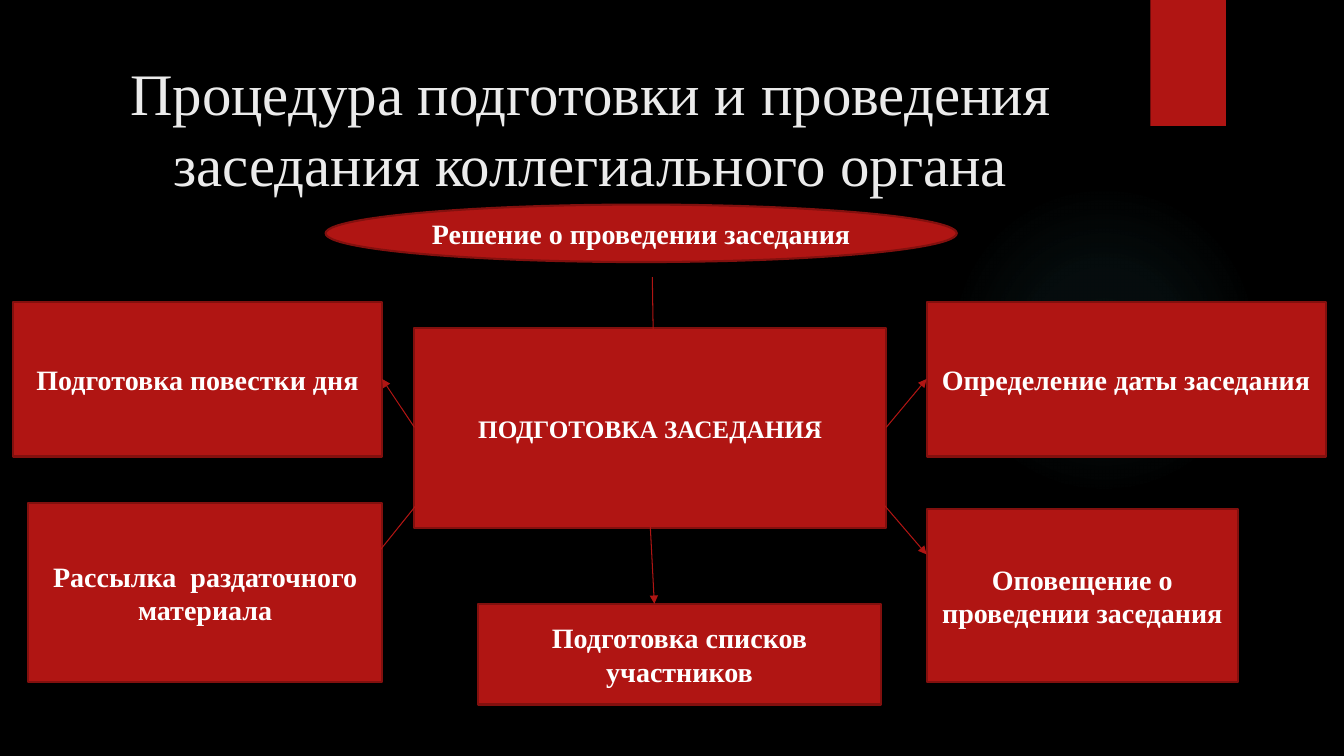
from pptx import Presentation
from pptx.dml.color import RGBColor
from pptx.enum.shapes import MSO_CONNECTOR, MSO_SHAPE
from pptx.enum.text import MSO_ANCHOR, MSO_AUTO_SIZE, PP_ALIGN
from pptx.oxml import parse_xml
from pptx.oxml.ns import nsdecls, qn
from pptx.util import Pt
from lxml.etree import SubElement

PX = 9144  # EMU per px, 100 px to the inch


class SlideBuilder:
    FONT = "Times New Roman"
    COLORS = {"bg": "000000", "red": "B01513", "border": "82100E",
              "title": "EBEBEB", "text": "FFFFFF", "glow": "50B9C1"}

    def __init__(self, prs):
        self.s = prs.slides.add_slide(prs.slide_layouts[5])
        fill = self.s.background.fill
        fill.solid()
        fill.fore_color.rgb = self.color("bg")

    def color(self, name):
        return RGBColor.from_string(self.COLORS[name])

    def put_text(self, tf, text, size, color, bold=False):
        tf.word_wrap = True
        tf.auto_size = MSO_AUTO_SIZE.NONE
        tf.vertical_anchor = MSO_ANCHOR.MIDDLE
        tf.text = text
        p = tf.paragraphs[0]
        p.alignment = PP_ALIGN.CENTER
        font = p.runs[0].font
        font.name, font.size, font.bold = self.FONT, Pt(size), bold
        font.color.rgb = self.color(color)

    def title(self, text, x, y, w, h):
        sp = self.s.shapes.title
        sp.left, sp.top, sp.width, sp.height = (v * PX for v in (x, y, w, h))
        self.put_text(sp.text_frame, text, 42, "title")

    def shape(self, kind, x, y, w, h):
        sp = self.s.shapes.add_shape(kind, *(v * PX for v in (x, y, w, h)))
        sp.shadow.inherit = False
        sp.fill.solid()
        sp.fill.fore_color.rgb = self.color("red")
        sp.line.fill.background()
        return sp

    def glow(self, x, y, size, stops):
        sp = self.shape(MSO_SHAPE.OVAL, x, y, size, size)
        gs = "".join(
            f'<a:gs pos="{pos * 1000}"><a:srgbClr val="{self.COLORS["glow"]}">'
            f'<a:alpha val="{alpha * 1000}"/></a:srgbClr></a:gs>'
            for pos, alpha in stops)
        grad = parse_xml(
            f'<a:gradFill {nsdecls("a")}><a:gsLst>{gs}</a:gsLst><a:path path="circle">'
            '<a:fillToRect l="50000" t="50000" r="50000" b="50000"/></a:path></a:gradFill>')
        spPr = sp.element.spPr
        spPr.replace(spPr.find(qn("a:solidFill")), grad)

    def node(self, text, x, y, w, h, kind=MSO_SHAPE.RECTANGLE, size=20):
        sp = self.shape(kind, x, y, w, h)
        sp.line.color.rgb = self.color("border")
        sp.line.width = Pt(1.5)
        self.put_text(sp.text_frame, text, size, "text", bold=True)

    def arrow(self, x1, y1, x2, y2):
        cxn = self.s.shapes.add_connector(
            MSO_CONNECTOR.STRAIGHT, *(v * PX for v in (x1, y1, x2, y2)))
        cxn.line.color.rgb = self.color("red")
        cxn.line.width = Pt(0.75)
        spPr = cxn.element.spPr
        SubElement(spPr.find(qn("a:ln")), qn("a:tailEnd"), type="triangle")
        SubElement(spPr, qn("a:effectLst"))


def main():
    prs = Presentation()
    prs.slide_width, prs.slide_height = 1333 * PX, 750 * PX
    b = SlideBuilder(prs)

    # Backdrop and heading
    b.glow(941, 183, 308, [(0, 7), (36, 6), (69, 0)])
    b.shape(MSO_SHAPE.RECTANGLE, 1141, 0, 75, 125)
    b.title("Процедура подготовки и проведения заседания коллегиального органа",
            71, 50, 1029, 153)

    # Decision, the central stage and its tasks
    b.node("Решение о проведении заседания", 323, 203, 626, 57, kind=MSO_SHAPE.OVAL)
    b.node("ПОДГОТОВКА ЗАСЕДАНИЯ", 411, 325, 468, 199, size=18)
    for text, *box in [
        ("Подготовка повестки дня", 13, 300, 366, 153),
        ("Определение даты заседания", 919, 300, 396, 153),
        ("Рассылка  раздаточного материала", 28, 499, 351, 178),
        ("Подготовка списков участников", 474, 599, 400, 100),
        ("Оповещение о проведении заседания", 919, 505, 309, 172),
    ]:
        b.node(text, *box)

    # Arrows
    for ends in [
        (647, 275, 649, 400),
        (411, 424, 379, 376),
        (879, 424, 919, 376),
        (474, 425, 364, 562),
        (810, 423, 919, 550),
        (645, 523, 649, 599),
    ]:
        b.arrow(*ends)

    prs.save("out.pptx")


if __name__ == "__main__":
    main()
